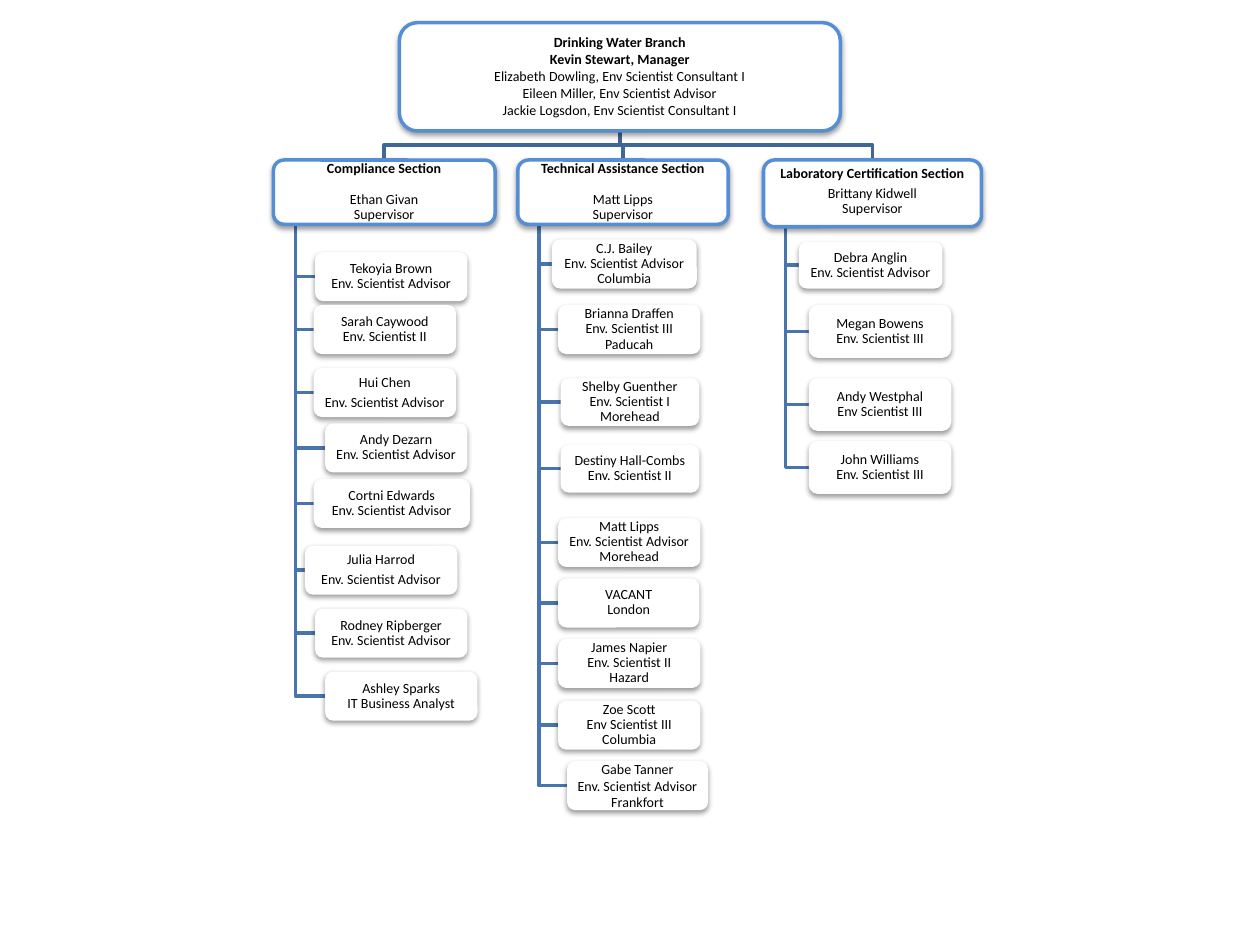
"""Draw the organisation chart of a drinking water branch."""
from lxml import etree
from pptx import Presentation
from pptx.dml.color import RGBColor
from pptx.enum import shapes, text
from pptx.oxml import ns
from pptx.util import Inches, Pt

COLORS = {
    "fill": "FFFFFF",
    "text": "000000",
    "border": "558ED5",
    "trunk": "3F6797",
    "branch": "4875AC",
    "shadow": "000000",
}
ADVISOR = "Env. Scientist Advisor"

HEAD = (3.17, 0.18, 3.5, 0.86)
BUS_Y = 1.15

SECTIONS = [
    {
        "at": (2.17, 1.27, 1.76, 0.51),
        "lines": ["Compliance Section", "Ethan Givan", "Supervisor"],
        "format": {"gap": 8.7},
        "staff": [
            ((2.5, 2, 1.21, 0.39), ["Tekoyia Brown", ADVISOR], {}),
            ((2.49, 2.42, 1.13, 0.39), ["Sarah Caywood", "Env. Scientist II"], {}),
            ((2.49, 2.92, 1.13, 0.39), ["Hui Chen", ADVISOR], {"gap": 2.8}),
            ((2.58, 3.36, 1.13, 0.39), ["Andy Dezarn", ADVISOR], {}),
            ((2.49, 3.8, 1.24, 0.39), ["Cortni Edwards", ADVISOR], {}),
            ((2.42, 4.33, 1.21, 0.39), ["Julia Harrod", ADVISOR], {"gap": 2.8}),
            ((2.5, 4.83, 1.21, 0.39), ["Rodney Ripberger", ADVISOR], {}),
            ((2.58, 5.33, 1.21, 0.39), ["Ashley Sparks", "IT Business Analyst"], {}),
        ],
    },
    {
        "at": (4.11, 1.27, 1.67, 0.51),
        "lines": ["Technical Assistance Section", "Matt Lipps", "Supervisor"],
        "format": {"gap": 8.7},
        "staff": [
            ((4.38, 1.9, 1.15, 0.39), ["C.J. Bailey", ADVISOR, "Columbia"], {}),
            ((4.43, 2.42, 1.13, 0.39), ["Brianna Draffen", "Env. Scientist III", "Paducah"], {}),
            ((4.45, 3, 1.1, 0.38), ["Shelby Guenther", "Env. Scientist I", "Morehead"], {}),
            ((4.45, 3.53, 1.1, 0.38), ["Destiny Hall-Combs", "Env. Scientist II"], {}),
            ((4.43, 4.11, 1.13, 0.39), ["Matt Lipps", ADVISOR, "Morehead"], {}),
            ((4.43, 4.59, 1.12, 0.39), ["VACANT", "London"], {}),
            ((4.43, 5.07, 1.13, 0.39), ["James Napier", "Env. Scientist II", "Hazard"], {}),
            ((4.43, 5.56, 1.13, 0.39), ["Zoe Scott", "Env Scientist III", "Columbia"], {}),
            ((4.5, 6.04, 1.12, 0.39), ["Gabe Tanner", ADVISOR, "Frankfort"], {"spacing": 1.0}),
        ],
    },
    {
        "at": (6.06, 1.27, 1.73, 0.53),
        "lines": ["Laboratory Certification Section", "Brittany Kidwell", "Supervisor"],
        "format": {"gap": 2.8, "first": 1.0, "anchor": text.MSO_ANCHOR.TOP},
        "staff": [
            ((6.34, 1.92, 1.14, 0.37), ["Debra Anglin", ADVISOR], {}),
            ((6.42, 2.42, 1.13, 0.42), ["Megan Bowens", "Env. Scientist III"], {}),
            ((6.42, 3, 1.13, 0.42), ["Andy Westphal", "Env Scientist III"], {}),
            ((6.42, 3.5, 1.13, 0.42), ["John Williams", "Env. Scientist III"], {}),
        ],
    },
]

prs = Presentation()
prs.slide_width, prs.slide_height = Inches(10), Inches(7.5)
s = prs.slides.add_slide(prs.slide_layouts[6])


def add_box(lines, at, bold=0, border=None, gap=0, spacing=0.9, first=None,
            anchor=text.MSO_ANCHOR.MIDDLE):
    sp = s.shapes.add_shape(shapes.MSO_SHAPE.ROUNDED_RECTANGLE, *map(Inches, at))
    sp.fill.solid()
    sp.fill.fore_color.rgb = RGBColor.from_string(COLORS["fill"])
    if border:
        sp.line.color.rgb = RGBColor.from_string(border)
        sp.line.width = Pt(2)
    else:
        sp.line.fill.background()
    sp.shadow.inherit = False
    effects = sp._element.spPr.find(ns.qn("a:effectLst"))
    shadow = etree.SubElement(effects, ns.qn("a:outerShdw"), blurRad=str(Pt(3.1)),
                              dist=str(Pt(1.6)), dir="5400000", rotWithShape="0")
    color = etree.SubElement(shadow, ns.qn("a:srgbClr"), val=COLORS["shadow"])
    etree.SubElement(color, ns.qn("a:alpha"), val="38000")
    tf = sp.text_frame
    tf.word_wrap = True
    tf.vertical_anchor = anchor
    tf.margin_left = tf.margin_right = tf.margin_top = tf.margin_bottom = Inches(0.01)
    for i, line in enumerate(lines):
        p = tf.paragraphs[0] if i == 0 else tf.add_paragraph()
        p.alignment = text.PP_ALIGN.CENTER
        p.line_spacing = first if first and i == 0 else spacing
        p.space_after = Pt(gap if i == 0 else 0)
        r = p.add_run()
        r.text = line
        r.font.name, r.font.size, r.font.bold = "Calibri", Pt(8), i < bold
        r.font.color.rgb = RGBColor.from_string(COLORS["text"])


def add_elbow(points, color):
    start, *rest = [(Inches(x), Inches(y)) for x, y in points]
    fb = s.shapes.build_freeform(*start)
    fb.add_line_segments(rest, close=False)
    sp = fb.convert_to_shape()
    sp.fill.background()
    sp.line.color.rgb = RGBColor.from_string(color)
    sp.line.width = Pt(2)
    sp.shadow.inherit = False


head_x, head_bottom = HEAD[0] + HEAD[2] / 2, HEAD[1] + HEAD[3]
for section in SECTIONS:
    left, top, width, height = section["at"]
    center, trunk = left + width / 2, left + width / 10
    add_elbow([(head_x, head_bottom), (head_x, BUS_Y), (center, BUS_Y), (center, top)],
              COLORS["trunk"])
    for (x, y, w, h), lines, style in section["staff"]:
        middle = y + h / 2
        add_elbow([(trunk, top + height), (trunk, middle), (x, middle)], COLORS["branch"])

add_box(["Drinking Water Branch", "Kevin Stewart, Manager",
         "Elizabeth Dowling, Env Scientist Consultant I",
         "Eileen Miller, Env Scientist Advisor",
         "Jackie Logsdon, Env Scientist Consultant I"],
        HEAD, bold=2, border=COLORS["border"], spacing=1.0, first=0.9)
for section in SECTIONS:
    add_box(section["lines"], section["at"], bold=1, border=COLORS["border"],
            **section["format"])
    for at, lines, style in section["staff"]:
        add_box(lines, at, **style)

prs.save("out.pptx")
